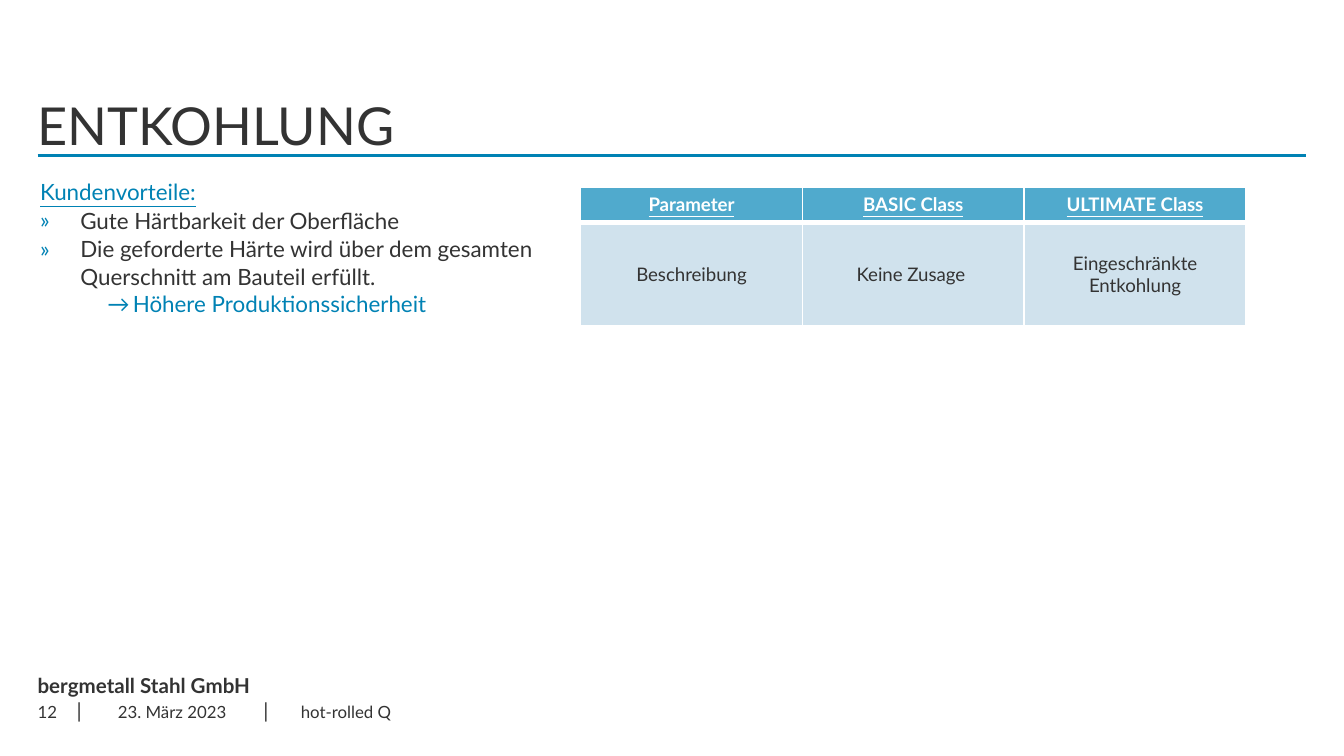
"""Build the slide on decarburisation with customer benefits and a class table."""
from dataclasses import dataclass

from lxml import etree
from pptx import Presentation
from pptx.dml.color import RGBColor
from pptx.enum.shapes import MSO_CONNECTOR
from pptx.enum.text import MSO_ANCHOR, PP_ALIGN
from pptx.oxml.ns import qn
from pptx.util import Inches, Pt

TOP, MIDDLE, BOTTOM = MSO_ANCHOR.TOP, MSO_ANCHOR.MIDDLE, MSO_ANCHOR.BOTTOM
LEFT, CENTER = PP_ALIGN.LEFT, PP_ALIGN.CENTER
STRAIGHT = MSO_CONNECTOR.STRAIGHT
FONT = "Lato"
COLORS = {"text": "333333", "accent": "0082B4", "header": "50AACD",
          "body": "D0E2ED", "white": "FFFFFF"}
MARGIN = 0.28


@dataclass
class Label:
    text: str
    left: float
    top: float
    width: float
    height: float
    size: float = 9
    bold: bool = False
    align: PP_ALIGN = LEFT
    anchor: MSO_ANCHOR = MIDDLE
    inset: bool = False


@dataclass
class Benefit:
    text: str
    color: str = "text"
    underline: bool = False
    bullet: str = ""
    left: float = 0
    hanging: float = 0
    spacing: float = 1.0
    level: int = 0


LABELS = [
    Label("bergmetall Stahl GmbH", MARGIN, 5.01, 6.44, 0.19, 11, True, anchor=TOP),
    Label("|", 0.57, 5.19, 0.22, 0.19, 11, anchor=TOP),
    Label("|", 1.96, 5.19, 0.22, 0.19, 11, anchor=TOP),
    Label("12", MARGIN, 5.15, 0.31, 0.3),
    Label("23. März 2023", 0.59, 5.15, 1.38, 0.3, align=CENTER, inset=True),
    Label("hot-rolled Q", 2.14, 5.15, 4.56, 0.3, inset=True),
]
BENEFITS = [
    Benefit("Kundenvorteile:", "accent", True),
    Benefit("Gute Härtbarkeit der Oberfläche", bullet="»", left=0.3,
            hanging=0.3, spacing=1.05),
    Benefit("Die geforderte Härte wird über dem gesamten Querschnitt am Bauteil erfüllt.",
            bullet="»", left=0.3, hanging=0.3, spacing=1.05),
    Benefit("Höhere Produktionssicherheit", "accent", bullet="→", left=0.69,
            hanging=0.19, level=1),
]
ROWS = [("Parameter", "BASIC Class", "ULTIMATE Class"),
        ("Beschreibung", "Keine Zusage ", "Eingeschränkte Entkohlung")]


def rgb(name: str) -> RGBColor:
    """Return a palette colour."""
    return RGBColor.from_string(COLORS[name])


def style(p, size: float, color: str = "text", bold: bool = False,
          underline: bool = False) -> None:
    """Format every run of a paragraph."""
    for r in p.runs:
        r.font.name, r.font.size = FONT, Pt(size)
        r.font.bold, r.font.underline = bold, underline
        r.font.color.rgb = rgb(color)


def clear_insets(tf) -> None:
    """Remove all inner margins of a text frame."""
    tf.margin_left = tf.margin_right = tf.margin_top = tf.margin_bottom = 0


def add_title(s, text: str) -> None:
    """Place the title and the rule beneath it."""
    sp = s.shapes.title
    sp.left, sp.top, sp.width, sp.height = map(Inches, (MARGIN, 0.19, 9.44, 0.97))
    tf = sp.text_frame
    tf.text = text
    tf.vertical_anchor = BOTTOM
    clear_insets(tf)
    p = tf.paragraphs[0]
    p.alignment, p.line_spacing = LEFT, Pt(32)
    style(p, 28)
    line = s.shapes.add_connector(STRAIGHT, Inches(MARGIN), Inches(1.16),
                                  Inches(10 - MARGIN), Inches(1.16))
    line.line.color.rgb, line.line.width = rgb("accent"), Pt(1.5)
    etree.SubElement(line._element.spPr, qn("a:effectLst"))


def add_label(s, label: Label) -> None:
    """Add one footer text box."""
    sp = s.shapes.add_textbox(*map(Inches, (label.left, label.top,
                                            label.width, label.height)))
    tf = sp.text_frame
    tf.word_wrap, tf.vertical_anchor = True, label.anchor
    if not label.inset:
        clear_insets(tf)
    tf.text = label.text
    p = tf.paragraphs[0]
    p.alignment = label.align
    style(p, label.size, bold=label.bold)


def add_bullet(p, benefit: Benefit) -> None:
    """Give a paragraph a hanging blue bullet."""
    pPr = p._p.get_or_add_pPr()
    pPr.set("marL", str(Inches(benefit.left)))
    pPr.set("indent", str(-Inches(benefit.hanging)))
    color = etree.SubElement(pPr, qn("a:buClr"))
    etree.SubElement(color, qn("a:srgbClr"), val=COLORS["accent"])
    etree.SubElement(pPr, qn("a:buFont"), typeface=FONT)
    etree.SubElement(pPr, qn("a:buChar"), char=benefit.bullet)


def add_benefits(s, benefits: list[Benefit]) -> None:
    """Add the list of customer benefits."""
    sp = s.shapes.add_textbox(*map(Inches, (0.2, 1.28, 3.87, 1.14)))
    tf = sp.text_frame
    tf.word_wrap = True
    for i, benefit in enumerate(benefits):
        p = tf.add_paragraph() if i else tf.paragraphs[0]
        p.text, p.level = benefit.text, benefit.level
        p.line_spacing = benefit.spacing
        if benefit.bullet:
            add_bullet(p, benefit)
        style(p, 12, benefit.color, underline=benefit.underline)


def add_borders(cell, top: float, bottom: float) -> None:
    """Draw white borders around a cell, with widths in points."""
    tcPr = cell._tc.get_or_add_tcPr()
    widths = {"a:lnL": 1, "a:lnR": 1, "a:lnT": top, "a:lnB": bottom}
    for i, (tag, width) in enumerate(widths.items()):
        ln = etree.Element(qn(tag), w=str(Pt(width)))
        fill = etree.SubElement(ln, qn("a:solidFill"))
        etree.SubElement(fill, qn("a:srgbClr"), val=COLORS["white"])
        tcPr.insert(i, ln)


def add_class_table(s, rows: list[tuple[str, ...]]) -> None:
    """Add the table that compares the classes."""
    table = s.shapes.add_table(len(rows), len(rows[0]), Inches(4.32), Inches(1.39),
                               Inches(4.95), Inches(1.02)).table
    for row, height in zip(table.rows, (0.25, 0.77)):
        row.height = Inches(height)
    for i, texts in enumerate(rows):
        head = i == 0
        for j, text in enumerate(texts):
            cell = table.cell(i, j)
            cell.text = text
            cell.vertical_anchor = TOP if head else MIDDLE
            cell.fill.solid()
            cell.fill.fore_color.rgb = rgb("header" if head else "body")
            p = cell.text_frame.paragraphs[0]
            p.alignment = CENTER
            style(p, 10, "white" if head else "text", head, head)
            add_borders(cell, 1 if head else 3, 3 if head else 1)


def main() -> None:
    """Build and save the presentation."""
    prs = Presentation()
    prs.slide_width, prs.slide_height = Inches(10), Inches(5.625)
    s = prs.slides.add_slide(prs.slide_layouts[5])
    add_title(s, "ENTKOHLUNG")
    for label in LABELS:
        add_label(s, label)
    add_benefits(s, BENEFITS)
    add_class_table(s, ROWS)
    prs.save("out.pptx")


if __name__ == "__main__":
    main()
